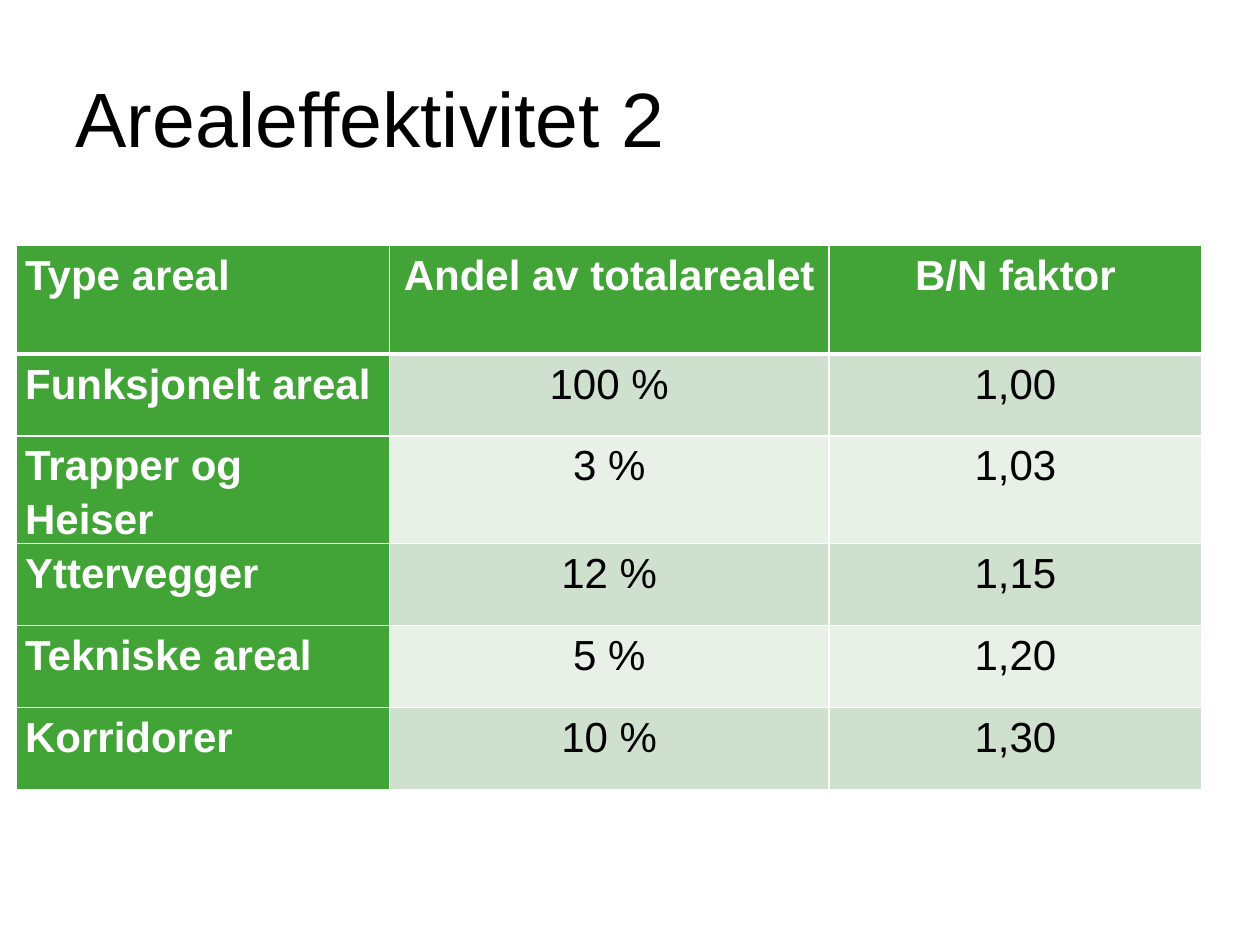
"""Build the slide on area efficiency with its table of gross/net factors."""
from lxml import etree
from pptx import Presentation
from pptx.dml.color import RGBColor
from pptx.enum import text
from pptx.oxml import ns
from pptx.util import Inches, Pt


def rgb(value):
    return RGBColor.from_string(value)


def write(tf, content, size=24, color="000000", bold=False, align=text.PP_ALIGN.LEFT, spacing=1.0):
    p = tf.paragraphs[0]
    p.alignment = align
    p.line_spacing = spacing
    r = p.add_run()
    r.text = content
    r.font.name = "Arial"
    r.font.size = Pt(size)
    r.font.bold = bold
    r.font.color.rgb = rgb(color)


GREEN, WHITE = "42A437", "FFFFFF"
BANDS = ["E9F0E8", "CFE0CE"]
ROWS = [
    ["Type areal", "Andel av totalarealet", "B/N faktor"],
    ["Funksjonelt areal", "100 %", "1,00"],
    ["Trapper og Heiser", "3 %", "1,03"],
    ["Yttervegger", "12 %", "1,15"],
    ["Tekniske areal", "5 %", "1,20"],
    ["Korridorer", "10 %", "1,30"],
]
COL_WIDTHS = [2.96, 3.49, 2.96]
ROW_HEIGHTS = [0.86] + [0.65] * 5

prs = Presentation()
prs.slide_width, prs.slide_height = Inches(10), Inches(7.5)
s = prs.slides.add_slide(prs.slide_layouts[5])

title = s.shapes.title
title.left, title.top, title.width, title.height = Inches(0.5), Inches(0.3), Inches(9), Inches(1.25)
title.text_frame.vertical_anchor = text.MSO_ANCHOR.MIDDLE
write(title.text_frame, "Arealeffektivitet 2", size=44)

table = s.shapes.add_table(len(ROWS), len(COL_WIDTHS), Inches(0.13), Inches(1.95),
                           Inches(sum(COL_WIDTHS)), Inches(sum(ROW_HEIGHTS))).table
table.first_row = table.first_col = table.horz_banding = True
for column, width in zip(table.columns, COL_WIDTHS):
    column.width = Inches(width)
for row, height in zip(table.rows, ROW_HEIGHTS):
    row.height = Inches(height)

for i, values in enumerate(ROWS):
    for j, value in enumerate(values):
        cell = table.cell(i, j)
        heading = i == 0 or j == 0
        cell.margin_left = cell.margin_right = Inches(0.07)
        cell.margin_top = cell.margin_bottom = 0
        tcPr = cell._tc.get_or_add_tcPr()
        for side in ("lnL", "lnR", "lnT", "lnB"):
            thick = (i == 0 and side == "lnB") or (i == 1 and side == "lnT")
            ln = etree.SubElement(tcPr, ns.qn(f"a:{side}"), w=str(Pt(3 if thick else 1)))
            fill = etree.SubElement(ln, ns.qn("a:solidFill"))
            etree.SubElement(fill, ns.qn("a:srgbClr"), val=WHITE)
        cell.fill.solid()
        cell.fill.fore_color.rgb = rgb(GREEN if heading else BANDS[i % 2])
        write(cell.text_frame, value, color=WHITE if heading else "000000", bold=heading,
              align=text.PP_ALIGN.CENTER if j else text.PP_ALIGN.LEFT, spacing=1.15)

prs.save("out.pptx")
